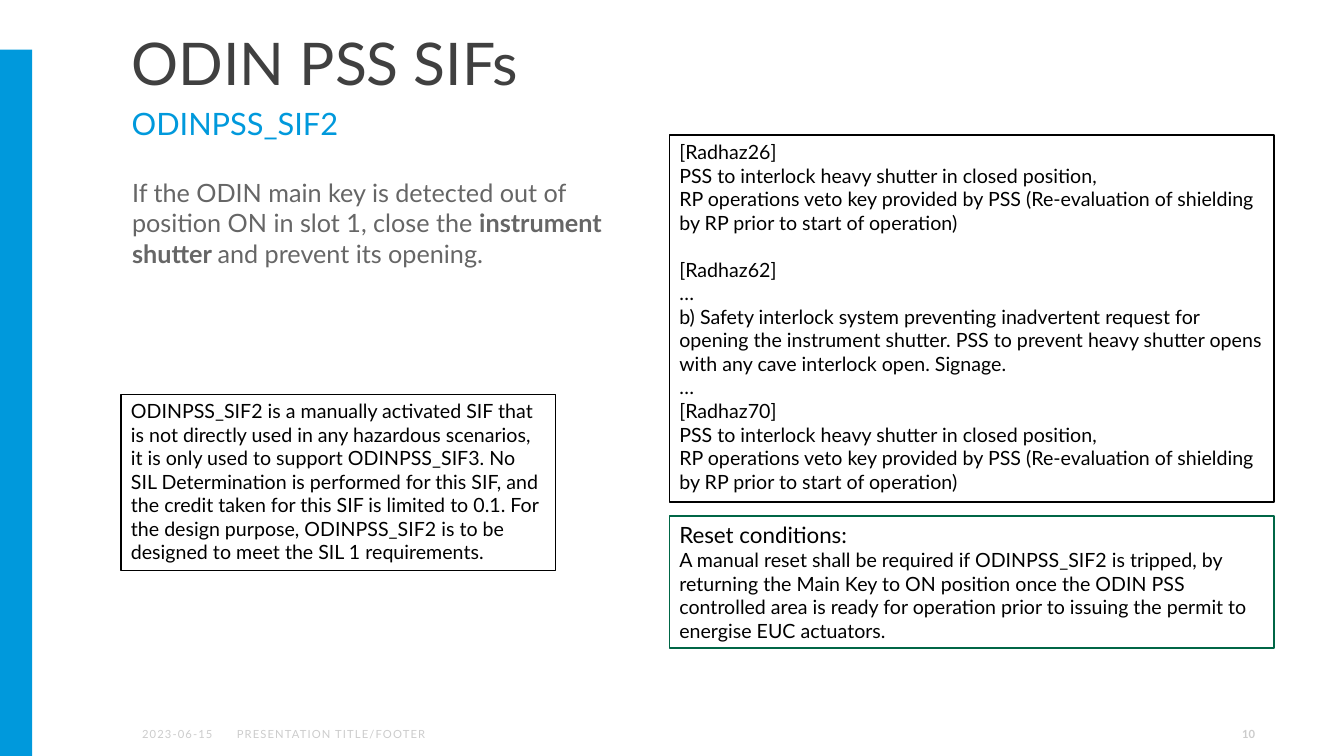
from pptx import Presentation, util as u
from pptx.dml import color
from pptx.enum import shapes, text

Cm, Pt = u.Cm, u.Pt


def paint(target, colour):
    target.solid()
    target.fore_color.rgb = color.RGBColor.from_string(colour)


def write(box, lines, colour, insets=(0.25, 0.13, 0.25, 0.13), anchor="TOP", align="LEFT"):
    frame = box.text_frame
    frame.word_wrap = True
    frame.vertical_anchor = text.MSO_ANCHOR[anchor]
    frame.margin_left, frame.margin_top, frame.margin_right, frame.margin_bottom = map(Cm, insets)
    for index, (line, size) in enumerate(lines):
        para = frame.add_paragraph() if index else frame.paragraphs[0]
        para.alignment = text.PP_ALIGN[align]
        para.font.name = "Lato"
        para.font.size = Pt(size)
        paint(para.font.fill, colour)
        para.add_run().text = line
    return frame.paragraphs


deck = Presentation()
deck.slide_width, deck.slide_height = Cm(33.87), Cm(19.05)
page = deck.slides.add_slide(deck.slide_layouts[6])

bar = page.shapes.add_shape(shapes.MSO_SHAPE.RECTANGLE, Cm(0), Cm(1.25), Cm(0.81), Cm(17.8))
bar.shadow.inherit = False
paint(bar.fill, "0099DC")
bar.line.fill.background()

title = page.shapes.add_textbox(Cm(3.07), Cm(0.74), Cm(26.01), Cm(1.83))
write(title, [("ODIN PSS SIFs", 42)], "404040", (0.25, 0.13, 0.25, 0.05))[0].line_spacing = 0.9
subtitle = page.shapes.add_textbox(Cm(3.07), Cm(2.59), Cm(26.01), Cm(1.4))
write(subtitle, [("ODINPSS_SIF2", 22)], "0099DC", (0.25, 0.05, 0.25, 0.13))

function = page.shapes.add_textbox(Cm(3.05), Cm(4.34), Cm(13.16), Cm(13.23))
opening = "If the ODIN main key is detected out of position ON in slot 1, close the "
para = write(function, [(opening, 18)], "666666", (0.28, 0.13, 0.05, 0.13))[0]
for words, bold in (("instrument shutter ", True), ("and prevent its opening.", False)):
    span = para.add_run()
    span.text = words
    span.font.bold = bold

footers = [
    ("2023-06-15", 3.33, 2.31, "LEFT"),
    ("PRESENTATION TITLE/FOOTER", 5.72, 11.99, "LEFT"),
    ("10", 24.26, 7.62, "RIGHT"),
]
for words, left, width, align in footers:
    footer = page.shapes.add_textbox(Cm(left), Cm(17.98), Cm(width), Cm(1.02))
    para = write(footer, [(words, 8)], "CCCCCC", anchor="MIDDLE", align=align)[0]
    if align == "RIGHT":
        para.font.bold = True
    else:
        para.runs[0].font._element.set("spc", "80")

shutter_lines = [
    "PSS to interlock heavy shutter in closed position,",
    "RP operations veto key provided by PSS (Re-evaluation of shielding by RP prior to start of operation)",
]
hazards = [
    "[Radhaz26]",
    *shutter_lines,
    "[Radhaz62]",
    "…",
    "b) Safety interlock system preventing inadvertent request for opening the instrument shutter. "
    "PSS to prevent heavy shutter opens with any cave interlock open. Signage.",
    "…",
    "[Radhaz70]",
    *shutter_lines,
]
reset = [
    ("Reset conditions:", 16),
    ("A manual reset shall be required if ODINPSS_SIF2 is tripped, by returning the Main Key to ON "
     "position once the ODIN PSS controlled area is ready for operation prior to issuing the permit "
     "to energise EUC actuators.", 14),
]
note = (
    "ODINPSS_SIF2 is a manually activated SIF that is not directly used in any hazardous scenarios, "
    "it is only used to support ODINPSS_SIF3. No SIL Determination is performed for this SIF, and the "
    "credit taken for this SIF is limited to 0.1. For the design purpose, ODINPSS_SIF2 is to be "
    "designed to meet the SIL 1 requirements."
)
panels = [
    (reset, (16.87, 13, 15.24, 3.33), "FFFFFF", "006646", 1),
    ([(line, 14) for line in hazards], (16.87, 3.4, 15.24, 9.25), "FFFFFF", "000000", 1),
    ([(note, 14)], (3.05, 9.93, 10.95, 4.45), None, "000000", 0.75),
]
for lines, place, fill, outline, weight in panels:
    panel = page.shapes.add_shape(shapes.MSO_SHAPE.RECTANGLE, *map(Cm, place))
    panel.shadow.inherit = False
    if fill:
        paint(panel.fill, fill)
    else:
        panel.fill.background()
    paint(panel.line.fill, outline)
    panel.line.width = Pt(weight)
    for para in write(panel, lines, "000000"):
        if para.text == "[Radhaz62]":
            para.space_before = Pt(16.8)

deck.save("out.pptx")
